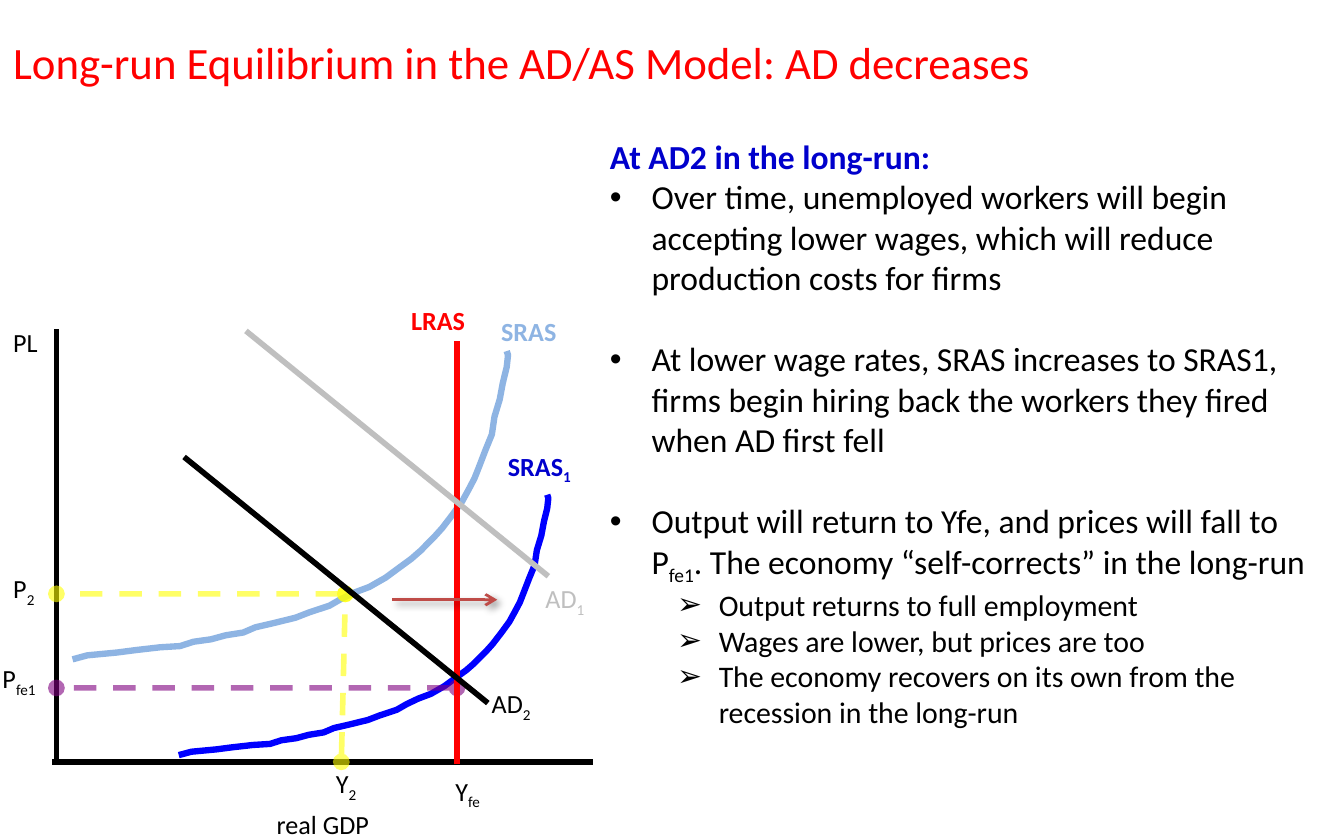
"""Build the slide on long-run equilibrium after a fall in aggregate demand."""
from dataclasses import dataclass

from lxml.etree import SubElement
from pptx import Presentation
from pptx.dml.color import RGBColor
from pptx.enum.dml import MSO_LINE
from pptx.enum.shapes import MSO_CONNECTOR
from pptx.enum.text import MSO_AUTO_SIZE
from pptx.oxml.ns import qn
from pptx.util import Inches, Pt


@dataclass(frozen=True)
class Theme:
    font: str = "Calibri"
    black: str = "000000"
    red: str = "FF0000"
    navy: str = "0000CC"
    blue: str = "0000FF"
    pale_blue: str = "8EB4E3"
    gray: str = "BFBFBF"
    purple: str = "800080"
    yellow: str = "FFFF00"
    brick: str = "BF4C48"
    title_size: int = 24
    body_size: int = 18
    detail_size: int = 16
    label_size: int = 14
    line_width: float = 3
    curve_width: float = 3.39
    arrow_width: float = 1.5


THEME = Theme()
WIDTH, HEIGHT = Inches(10), Inches(6.25)
COLUMN, ROW = WIDTH / 100, HEIGHT / 100
LABEL_ROWS = 5.44
INDENT = 0.31

TITLE = "Long-run Equilibrium in the AD/AS Model: AD decreases"
HEADING = "At AD2 in the long-run:"
POINTS = [
    "Over time, unemployed workers will begin accepting lower wages, "
    "which will reduce production costs for firms",
    "At lower wage rates, SRAS increases to SRAS1, firms begin hiring back "
    "the workers they fired when AD first fell",
    "Output will return to Yfe, and prices will fall to P|fe1|. "
    "The economy “self-corrects” in the long-run",
]
DETAILS = [
    "Output returns to full employment",
    "Wages are lower, but prices are too",
    "The economy recovers on its own from the recession in the long-run",
]
LABELS = [
    ("PL", 0, 38.1, 7.4, THEME.black, False),
    ("SRAS", 36.3, 36.8, 8.1, THEME.pale_blue, True),
    ("LRAS", 29.6, 35.4, 8.1, THEME.red, True),
    ("SRAS|1", 36.8, 52.8, 9.2, THEME.navy, True),
    ("real GDP", 19.6, 95.4, 12.3, THEME.black, False),
    ("P|fe1", -0.8, 78.1, 5.2, THEME.black, False),
    ("Y|fe", 32.9, 91.5, 5.4, THEME.black, False),
    ("P|2", 0, 67.4, 5.2, THEME.black, False),
    ("Y|2", 24, 90.6, 5.2, THEME.black, False),
    ("AD|1", 39.6, 68.6, 8.1, THEME.gray, False),
    ("AD|2", 35.6, 81.1, 8.1, THEME.black, False),
]
AXES = [((4.2, 39.2), (4.2, 90.6)), ((3.9, 90.7), (44.1, 90.7))]
GUIDES = [
    ((34, 81.9), (4.2, 81.9), THEME.purple),
    ((25.7, 70.7), (4.2, 70.7), THEME.yellow),
    ((25.4, 90.7), (25.7, 70.7), THEME.yellow),
]
SCHEDULES = [
    ((34, 91), (34, 40.6), THEME.red),
    ((18.3, 39.4), (40.8, 68.6), THEME.gray),
    ((13.7, 54.4), (36.3, 83.7), THEME.black),
]
SHIFT = ((29.2, 71.4), (37, 71.4))
SUPPLY_CURVES = [
    (5.4, 41.8, 32.4, 36.7, THEME.pale_blue),
    (13.3, 58.9, 27.5, 31, THEME.blue),
]
SUPPLY_SHAPE = [
    (0, 100), (3.4, 98.7), (10.2, 97.8), (14.5, 97), (20.1, 96.1),
    (24.7, 95.7), (27.8, 94.3), (31.8, 93.5), (35.2, 92.2), (39.2, 91.3),
    (42, 89.6), (46, 88.3), (51.2, 86.5), (54.3, 84.8), (59, 82.6),
    (61.7, 80.4), (64.8, 78.3), (68.2, 76.5), (71.9, 73.5), (74.4, 70.9),
    (77.8, 67.4), (79.9, 64.8), (83, 60.4), (84.9, 57.4), (87.3, 53),
    (89.5, 48.7), (91, 44.8), (92.3, 41.3), (93.5, 37), (94.8, 32.2),
    (96.3, 27), (96.9, 21.3), (98.1, 15.7), (98.8, 10.4), (99.7, 5.2),
    (100, 1.3), (99.7, 0),
]


def place(column, row):
    return round(column * COLUMN), round(row * ROW)


def add_text_box(slide, column, row, columns, rows):
    shape = slide.shapes.add_textbox(*place(column, row), *place(columns, rows))
    shape.text_frame.word_wrap = True
    shape.text_frame.auto_size = MSO_AUTO_SIZE.SHAPE_TO_FIT_TEXT
    return shape.text_frame


def write(paragraph, text, size, color, bold=False):
    for index, part in enumerate(text.split("|")):
        run = paragraph.add_run()
        run.text = part
        run.font.name = THEME.font
        run.font.size = Pt(size)
        run.font.bold = bold
        run.font.color.rgb = RGBColor.from_string(color)
        if index % 2:
            run.font._element.set("baseline", "-25000")


def add_bullet(text_frame, text, size, level, mark):
    paragraph = text_frame.add_paragraph()
    paragraph.level = level
    properties = paragraph._p.get_or_add_pPr()
    properties.set("marL", str(Inches(INDENT + level / 2)))
    properties.set("indent", str(-Inches(INDENT)))
    SubElement(properties, qn("a:buFont"), typeface="Arial")
    SubElement(properties, qn("a:buChar"), char=mark)
    write(paragraph, text, size, THEME.black)
    return paragraph


def add_line(slide, start, end, color, width=THEME.line_width):
    connector = slide.shapes.add_connector(MSO_CONNECTOR.STRAIGHT, *place(*start), *place(*end))
    connector.line.color.rgb = RGBColor.from_string(color)
    connector.line.width = Pt(width)
    effects = SubElement(connector._element.spPr, qn("a:effectLst"))
    return connector, effects


def add_guide(slide, start, end, color):
    connector, _ = add_line(slide, start, end, color)
    connector.line.dash_style = MSO_LINE.DASH
    outline = connector.line._get_or_add_ln()
    SubElement(outline.find(".//" + qn("a:srgbClr")), qn("a:alpha"), val="60000")
    for name in ("a:headEnd", "a:tailEnd"):
        SubElement(outline, qn(name), type="oval")


def add_shift_arrow(slide, start, end):
    connector, effects = add_line(slide, start, end, THEME.brick, THEME.arrow_width)
    SubElement(connector.line._get_or_add_ln(), qn("a:tailEnd"), type="arrow")
    shadow = SubElement(effects, qn("a:outerShdw"), blurRad=str(Pt(4)), dist=str(Pt(3)),
                        dir=str(45 * 60000), rotWithShape="0")
    shade = SubElement(shadow, qn("a:srgbClr"), val=THEME.black)
    SubElement(shade, qn("a:alpha"), val="40000")


def add_supply_curve(slide, column, row, columns, rows, color):
    points = [place(column + x * columns / 100, row + y * rows / 100) for x, y in SUPPLY_SHAPE]
    builder = slide.shapes.build_freeform(*points[0])
    builder.add_line_segments(points[1:], close=False)
    shape = builder.convert_to_shape()
    shape.shadow.inherit = False
    shape.fill.background()
    shape.line.color.rgb = RGBColor.from_string(color)
    shape.line.width = Pt(THEME.curve_width)


def add_explanation(slide):
    text_frame = add_text_box(slide, 44.4, 15.4, 55.6, 72.2)
    write(text_frame.paragraphs[0], HEADING, THEME.body_size, THEME.navy, True)
    for index, text in enumerate(POINTS):
        paragraph = add_bullet(text_frame, text, THEME.body_size, 0, "•")
        paragraph.space_before = Pt(22 if index else 0)
    for text in DETAILS:
        add_bullet(text_frame, text, THEME.detail_size, 1, "➢")


def add_diagram(slide):
    for start, end in AXES:
        add_line(slide, start, end, THEME.black)
    for curve in SUPPLY_CURVES:
        add_supply_curve(slide, *curve)
    for guide in GUIDES:
        add_guide(slide, *guide)
    for schedule in SCHEDULES:
        add_line(slide, *schedule)
    add_shift_arrow(slide, *SHIFT)
    for text, column, row, columns, color, bold in LABELS:
        text_frame = add_text_box(slide, column, row, columns, LABEL_ROWS)
        write(text_frame.paragraphs[0], text, THEME.label_size, color, bold)


def main():
    presentation = Presentation()
    presentation.slide_width, presentation.slide_height = WIDTH, HEIGHT
    slide = presentation.slides.add_slide(presentation.slide_layouts[6])
    title = add_text_box(slide, 0, 3.4, 100, 8)
    write(title.paragraphs[0], TITLE, THEME.title_size, THEME.red)
    add_explanation(slide)
    add_diagram(slide)
    presentation.save("out.pptx")


if __name__ == "__main__":
    main()
